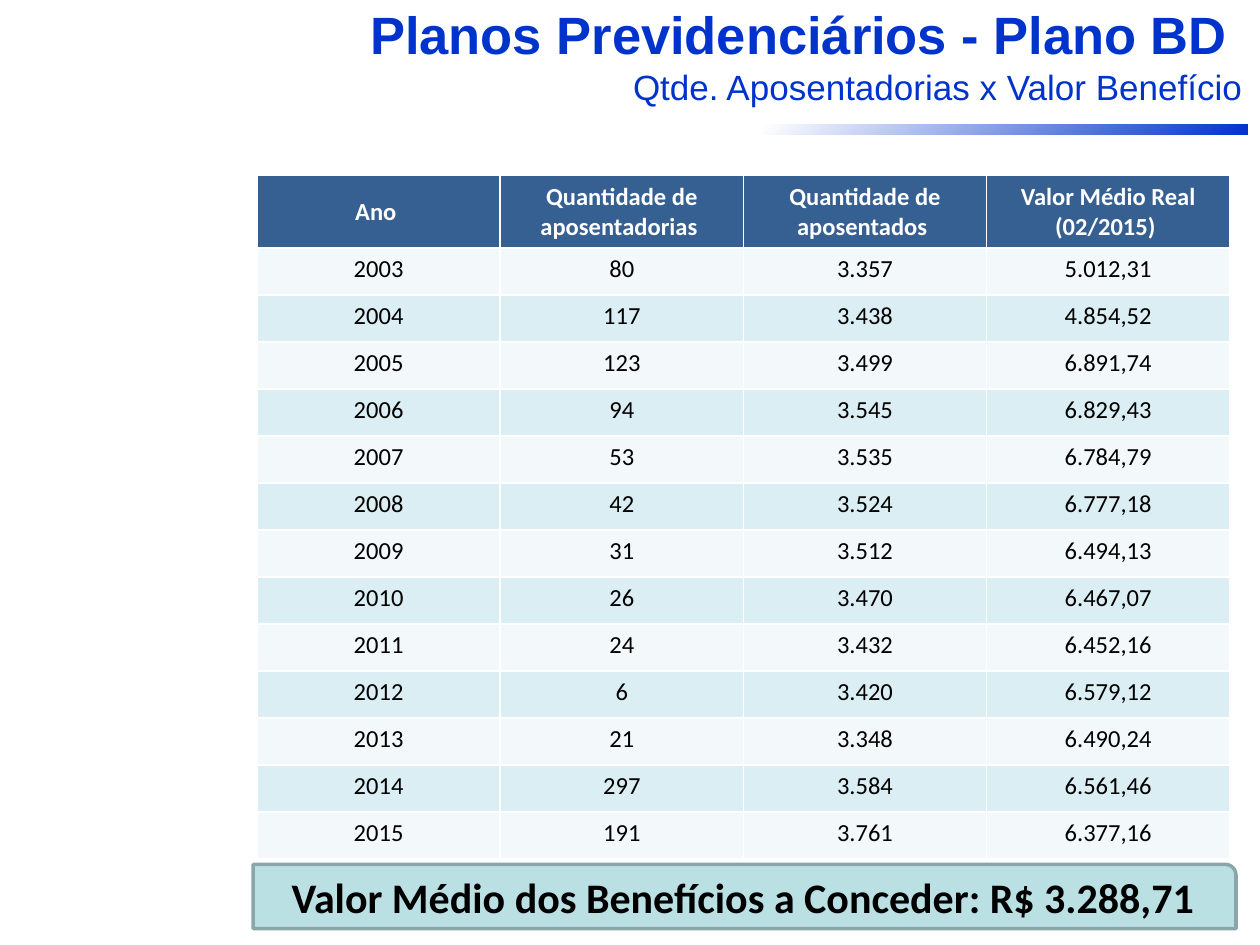
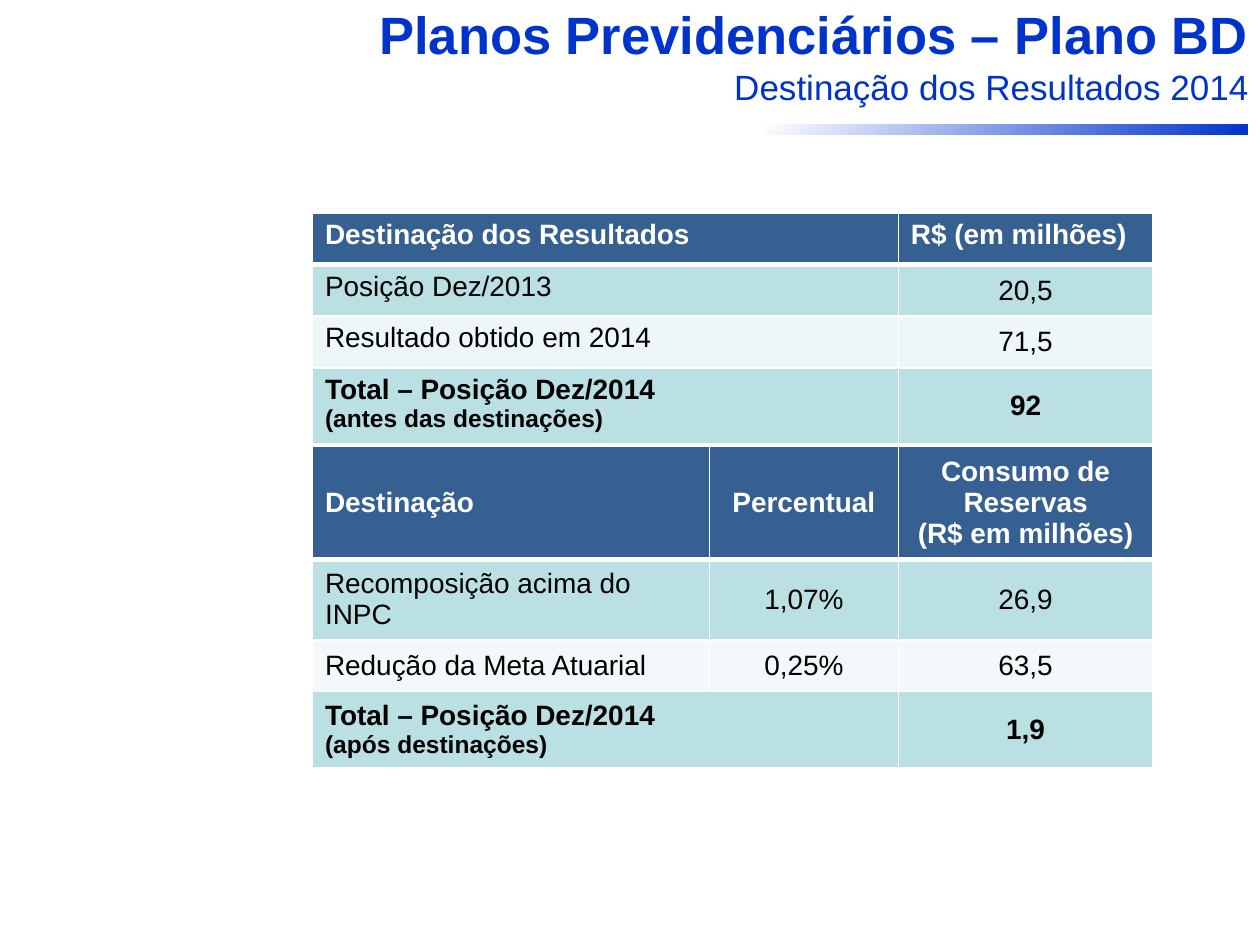
"""Build two slides on the BD pension plan: retirements and use of results."""
from dataclasses import dataclass

from lxml.etree import SubElement
from pptx import Presentation
from pptx.dml.color import RGBColor
from pptx.enum.shapes import MSO_SHAPE
from pptx.enum.text import MSO_ANCHOR, PP_ALIGN
from pptx.oxml.ns import qn
from pptx.util import Inches, Pt

LEFT, CENTER, RIGHT = PP_ALIGN.LEFT, PP_ALIGN.CENTER, PP_ALIGN.RIGHT
TOP, MIDDLE = MSO_ANCHOR.TOP, MSO_ANCHOR.MIDDLE


@dataclass(frozen=True)
class Theme:
    blue: str = "0033CC"
    header: str = "366092"
    teal: str = "BBE0E3"
    teal_line: str = "8AA6A8"
    sky: str = "DBEEF3"
    pale: str = "F3F9FA"
    mist: str = "EDF7F9"
    white: str = "FFFFFF"
    black: str = "000000"
    heading_font: str = "Arial"
    body_font: str = "Calibri"
    title_size: int = 30
    subtitle_size: int = 20
    callout_size: int = 24
    text_size: int = 16
    small_size: int = 14
    thin: int = 1
    thick: int = 3


T = Theme()

RETIREMENTS = [
    ["Ano ", "Quantidade de aposentadorias ", "Quantidade de aposentados ",
     "Valor Médio Real (02/2015) "],
    ["2003", "80", "3.357", "5.012,31"],
    ["2004", "117", "3.438", "4.854,52"],
    ["2005", "123", "3.499", "6.891,74"],
    ["2006", "94", "3.545", "6.829,43"],
    ["2007", "53", "3.535", "6.784,79"],
    ["2008", "42", "3.524", "6.777,18"],
    ["2009", "31", "3.512", "6.494,13"],
    ["2010", "26", "3.470", "6.467,07"],
    ["2011", "24", "3.432", "6.452,16"],
    ["2012", "6", "3.420", "6.579,12"],
    ["2013", "21", "3.348", "6.490,24"],
    ["2014", "297", "3.584", "6.561,46"],
    ["2015", "191", "3.761", "6.377,16"],
]
RESULTS = [
    ["Destinação dos Resultados", "R$ (em milhões)"],
    ["Posição Dez/2013", "20,5"],
    ["Resultado obtido em 2014", "71,5"],
    ["Total – Posição Dez/2014\n(antes das destinações)", "92"],
]
ALLOCATION = [
    ["Destinação", "Percentual", "Consumo de Reservas\n(R$ em milhões)"],
    ["Recomposição acima do INPC", "1,07%", "26,9"],
    ["Redução da Meta Atuarial", "0,25%", "63,5"],
    ["Total – Posição Dez/2014\n(após destinações)", "", "1,9"],
]


def rgb(value):
    return RGBColor.from_string(value)


def write(tf, lines, align):
    """Write (text, font format) pairs as the paragraphs of a text frame."""
    for i, (text, fmt) in enumerate(lines):
        p = tf.add_paragraph() if i else tf.paragraphs[0]
        p.alignment = align
        r = p.add_run()
        r.text = text
        for name, value in fmt.items():
            if name == "color":
                r.font.color.rgb = rgb(value)
            else:
                setattr(r.font, name, value)


def font(size, color, bold=False, name=T.heading_font):
    return {"size": Pt(size), "color": color, "bold": bold, "name": name}


def add_heading(s, left, width, title, subtitle):
    """Add the gradient band and the right-aligned title with its subtitle."""
    band = s.shapes.add_shape(MSO_SHAPE.RECTANGLE, Inches(6.06), Inches(0.99),
                              Inches(3.84), Inches(0.08))
    band.shadow.inherit = False
    band.line.fill.background()
    band.fill.gradient()
    band.fill.gradient_angle = 315
    for stop, color, position in zip(band.fill.gradient_stops,
                                     (T.white, T.blue), (0, 1)):
        stop.color.rgb = rgb(color)
        stop.position = position
    box = s.shapes.add_textbox(Inches(left), Inches(-0.03),
                               Inches(width), Inches(0.94))
    box.text_frame.word_wrap = True
    write(box.text_frame, [(title, font(T.title_size, T.blue, True)),
                           (subtitle, font(T.subtitle_size, T.blue))], RIGHT)


def add_callout(s, text):
    sp = s.shapes.add_shape(MSO_SHAPE.ROUND_1_RECTANGLE, Inches(2.01),
                            Inches(6.86), Inches(7.8), Inches(0.51))
    sp.shadow.inherit = False
    sp.fill.solid()
    sp.fill.fore_color.rgb = rgb(T.teal)
    sp.line.color.rgb = rgb(T.teal_line)
    sp.line.width = Pt(2)
    tf = sp.text_frame
    tf.word_wrap = True
    tf.vertical_anchor = MIDDLE
    write(tf, [(text, font(T.callout_size, T.black, True, T.body_font))], CENTER)


def set_borders(cell, top, bottom):
    """Give a filled cell white borders, with the top and bottom weights given."""
    tc_pr = cell._tc.get_or_add_tcPr()
    weights = {"a:lnL": T.thin, "a:lnR": T.thin, "a:lnT": top, "a:lnB": bottom}
    for i, (tag, weight) in enumerate(weights.items()):
        ln = SubElement(tc_pr, qn(tag), w=str(Pt(weight)))
        fill = SubElement(ln, qn("a:solidFill"))
        SubElement(fill, qn("a:srgbClr"), val=T.white)
        tc_pr.insert(i, ln)


def add_grid(s, left, top, cols, heights, data, fills, look, rule=T.thin):
    """Add a table; look(row, col) gives cell format, alignment and fonts by line."""
    table = s.shapes.add_table(len(data), len(cols), Inches(left), Inches(top),
                               Inches(sum(cols)), Inches(sum(heights))).table
    table.horz_banding = False
    for col, width in zip(table.columns, cols):
        col.width = Inches(width)
    for i, (row, height) in enumerate(zip(table.rows, heights)):
        row.height = Inches(height)
        for j, cell in enumerate(row.cells):
            fmt, align, fonts = look(i, j)
            for name, value in fmt.items():
                setattr(cell, name, value)
            cell.fill.solid()
            cell.fill.fore_color.rgb = rgb(fills[i])
            set_borders(cell, rule if i == 1 else T.thin,
                        rule if i == 0 else T.thin)
            if data[i][j]:
                write(cell.text_frame, zip(data[i][j].split("\n"), fonts), align)
    return table


def retirement_look(i, j):
    fmt = {f"margin_{side}": Inches(0.05)
           for side in ("left", "right", "top", "bottom")}
    fmt["vertical_anchor"] = TOP if i else MIDDLE
    color = T.black if i else T.white
    return fmt, CENTER, [font(T.small_size, color, i == 0, T.body_font)]


def result_look(label_anchor, header_align):
    """Return the look shared by the result tables: header, items and total."""
    def look(i, j):
        anchor = label_anchor if i == 0 or j == 0 else MIDDLE
        align = LEFT if j == 0 else CENTER if i else header_align
        color = T.black if i else T.white
        bold = i in (0, 3)
        sizes = (T.text_size, T.small_size if i else T.text_size)
        fonts = [font(size, color, bold) for size in sizes]
        return {"vertical_anchor": anchor}, align, fonts
    return look


def build_retirements(prs):
    s = prs.slides.add_slide(prs.slide_layouts[6])
    add_heading(s, 0.35, 9.61, "Planos Previdenciários - Plano BD ",
                "Qtde. Aposentadorias x Valor Benefício")
    add_callout(s, "Valor Médio dos Benefícios a Conceder: R$ 3.288,71")
    years = len(RETIREMENTS) - 1
    heights = [0.58] + [(5.43 - 0.58) / years] * years
    fills = [T.header] + [(T.pale, T.sky)[n % 2] for n in range(years)]
    add_grid(s, 2.04, 1.39, [1.93] * 4, heights, RETIREMENTS, fills,
             retirement_look)


def build_results(prs):
    s = prs.slides.add_slide(prs.slide_layouts[6])
    add_heading(s, 2.72, 7.29, "Planos Previdenciários – Plano BD",
                "Destinação dos Resultados 2014")
    add_grid(s, 2.48, 1.69, [4.65, 2.02], [0.41, 0.41, 0.41, 0.57], RESULTS,
             [T.header, T.teal, T.mist, T.teal], result_look(TOP, LEFT), T.thick)
    table = add_grid(s, 2.48, 3.54, [3.15, 1.5, 2.02], [0.89, 0.64, 0.41, 0.6],
                     ALLOCATION, [T.header, T.teal, T.pale, T.teal],
                     result_look(MIDDLE, CENTER), T.thick)
    table.cell(3, 0).merge(table.cell(3, 1))


def main():
    prs = Presentation()
    prs.slide_width, prs.slide_height = Inches(10), Inches(7.5)
    build_retirements(prs)
    build_results(prs)
    prs.save("out.pptx")


if __name__ == "__main__":
    main()
